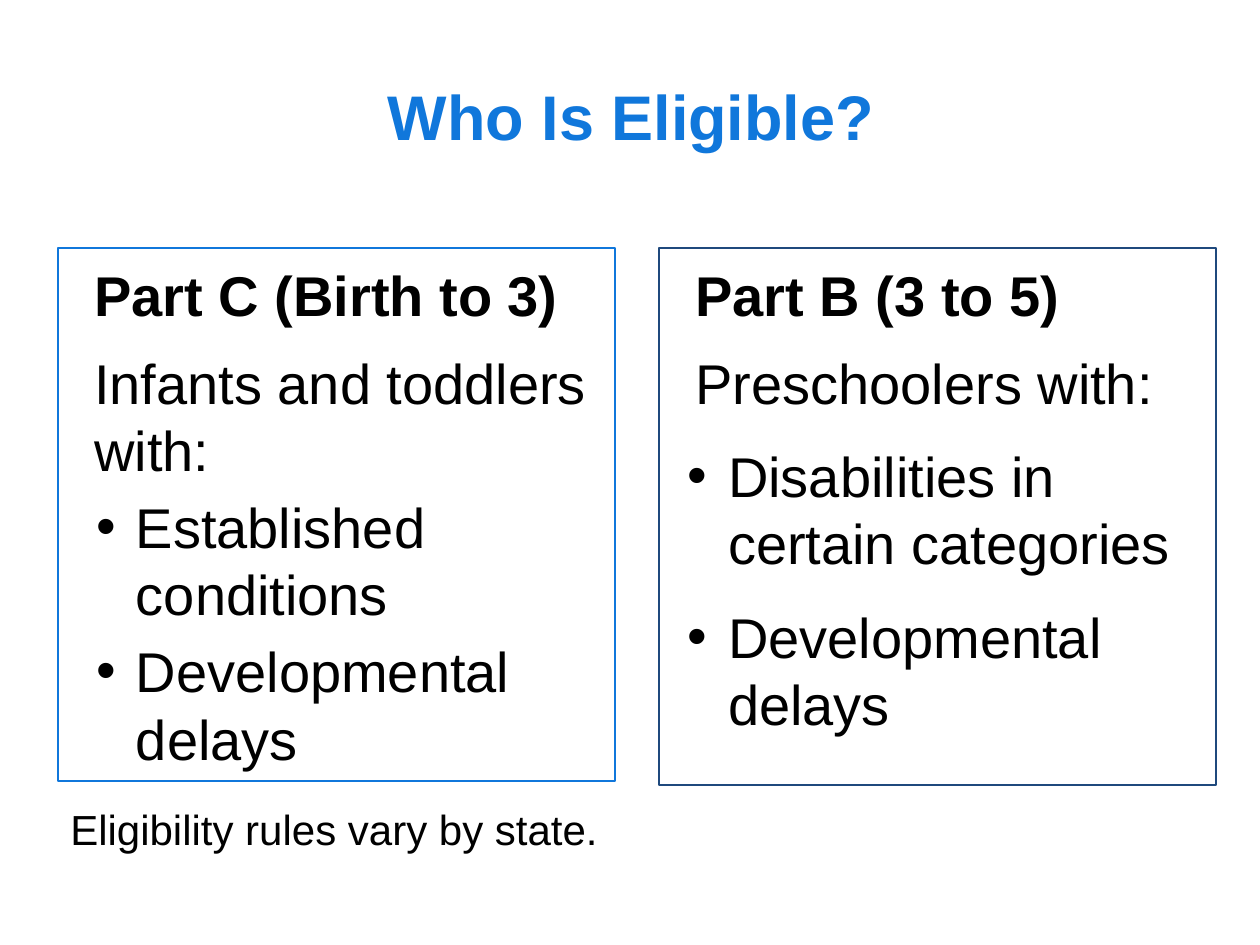
from pptx import Presentation
from pptx.dml.color import RGBColor
from pptx.enum.shapes import MSO_SHAPE as Shape
from pptx.enum.text import MSO_ANCHOR as Anchor, PP_ALIGN as Align
from pptx.oxml.ns import qn
from pptx.util import Inches, Pt
from lxml.etree import SubElement

BLUE, NAVY, BLACK = "1077DB", "1F497D", "000000"


def color(code):
    return RGBColor.from_string(code)


def style(para, text, size, code=BLACK, bold=False):
    para.text = text
    font = para.font
    font.name, font.size, font.bold = "Arial", Pt(size), bold
    font.color.rgb = color(code)


deck = Presentation()
deck.slide_width, deck.slide_height = Inches(10), Inches(7.5)
slide = deck.slides.add_slide(deck.slide_layouts[5])

title = slide.shapes.title
title.left, title.top = Inches(0.01), Inches(0.29)
title.width, title.height = Inches(10), Inches(1.25)
frame = title.text_frame
frame.word_wrap = True
frame.vertical_anchor = Anchor.MIDDLE
style(frame.paragraphs[0], "Who Is Eligible?", 36, BLUE, True)
frame.paragraphs[0].alignment = Align.CENTER

left, top, wide, gap = 0.46, 1.97, 4.42, 0.35
# height, line colour, line width, bullet indent, hang, bullet gap, texts
cards = [
    (4.23, BLUE, 1.5, 0.52, 0.31, 5.6,
     ["Part C (Birth to 3)", "Infants and toddlers with:",
      "Established conditions", "Developmental delays"]),
    (4.26, NAVY, 1.25, 0.45, 0.32, 15,
     ["Part B (3 to 5)", "Preschoolers with:",
      "Disabilities in certain categories", "Developmental delays"]),
]
for col, (tall, edge, weight, indent, hang, space, texts) in enumerate(cards):
    card = slide.shapes.add_shape(
        Shape.RECTANGLE, Inches(left + col * (wide + gap)), Inches(top),
        Inches(wide), Inches(tall))
    card.shadow.inherit = False
    card.fill.background()
    card.line.color.rgb = color(edge)
    card.line.width = Pt(weight)
    frame = card.text_frame
    frame.word_wrap = True
    frame.vertical_anchor = Anchor.TOP
    frame.margin_top = frame.margin_bottom = Inches(0.1)
    for row, text in enumerate(texts):
        para = frame.add_paragraph() if row else frame.paragraphs[0]
        para.alignment = Align.LEFT
        para.space_before = Pt([0, 11.6, space, space][row])
        props = para._p.get_or_add_pPr()
        bullet = row > 1
        props.set("marL", str(Inches(indent if bullet else 0.19)))
        props.set("indent", str(Inches(-hang if bullet else 0)))
        if bullet:
            tint = SubElement(props, qn("a:buClr"))
            SubElement(tint, qn("a:srgbClr"), val=BLACK)
            SubElement(props, qn("a:buFont"), typeface="Arial")
            SubElement(props, qn("a:buChar"), char="•")
        style(para, text, 32, bold=row == 0)

note = slide.shapes.add_textbox(
    Inches(left), Inches(6.33), Inches(7.84), Inches(0.64))
note.text_frame.word_wrap = True
style(note.text_frame.paragraphs[0], "Eligibility rules vary by state.", 24)

deck.save("out.pptx")
